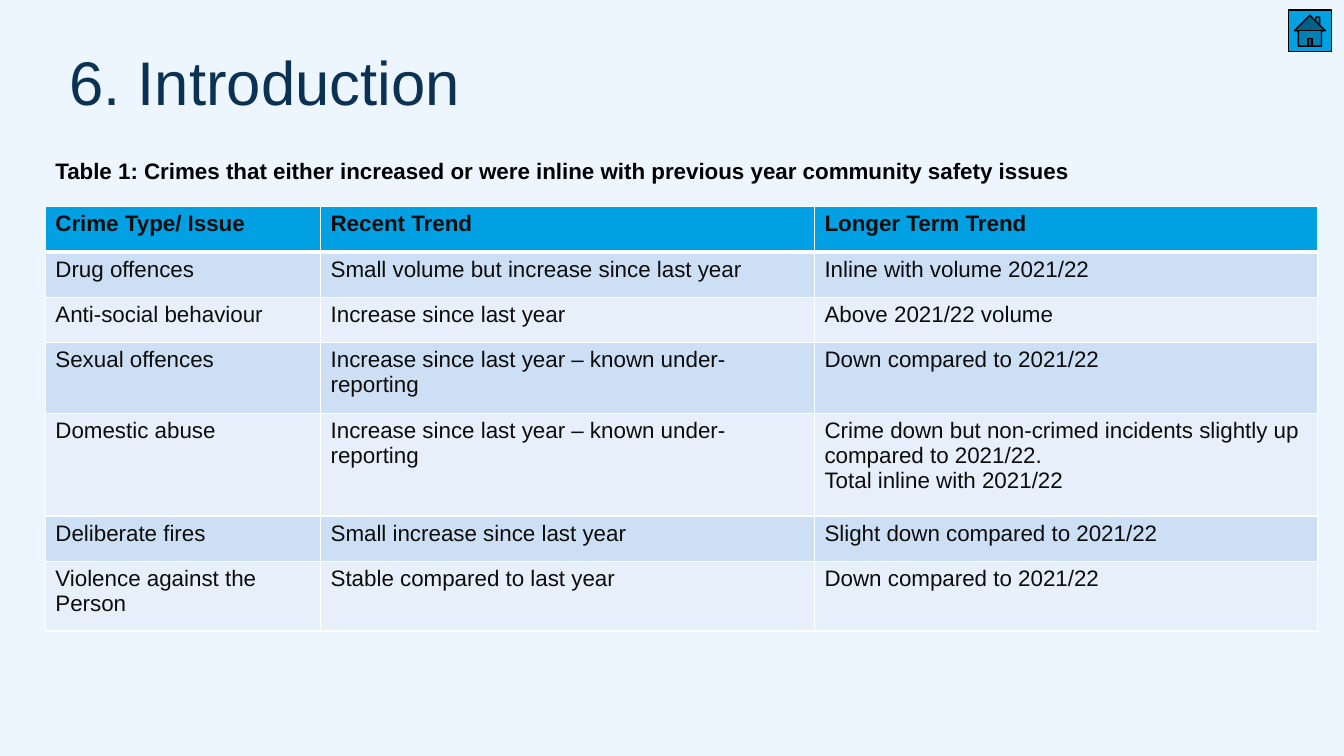
import pptx
import pptx.dml.color
import pptx.enum.shapes
import pptx.oxml
import pptx.oxml.ns
import pptx.util

Pt = pptx.util.Pt


def color(value):
    return pptx.dml.color.RGBColor.from_string(value)


class SlideBuilder:
    """Draw styled elements on one slide, with lengths in points."""

    font = "Arial"
    background = "EDF6FF"
    accent = "00A0E2"
    title_ink = "0B3153"
    body_ink = "0D0D0D"
    black = "000000"
    white = "FFFFFF"
    bands = ("CCDFF4", "E7F0FA")

    def __init__(self, slide):
        self.slide = slide
        fill = slide.background.fill
        fill.solid()
        fill.fore_color.rgb = color(self.background)

    def set_text(self, frame, text, size, ink, bold=False):
        frame.word_wrap = True
        frame.text = text
        for paragraph in frame.paragraphs:
            paragraph.font.name = self.font
            paragraph.font.size = Pt(size)
            paragraph.font.bold = bold
            paragraph.font.color.rgb = color(ink)

    def text(self, box, text, size, ink, bold=False):
        frame = self.slide.shapes.add_textbox(*map(Pt, box)).text_frame
        self.set_text(frame, text, size, ink, bold)
        return frame

    def title(self, box, text):
        frame = self.text(box, text, 44, self.title_ink)
        frame.margin_left = frame.margin_right = 0
        frame.margin_top = frame.margin_bottom = 0
        frame.paragraphs[0].line_spacing = 0.9

    def home_button(self, box):
        kind = pptx.enum.shapes.MSO_SHAPE.ACTION_BUTTON_HOME
        button = self.slide.shapes.add_shape(kind, *map(Pt, box))
        button.shadow.inherit = False
        button.fill.solid()
        button.fill.fore_color.rgb = color(self.accent)
        button.line.color.rgb = color(self.black)
        button.line.width = Pt(1)

    def borders(self, cell, top, bottom):
        properties = cell._tc.get_or_add_tcPr()
        widths = {"L": 1, "R": 1, "T": top, "B": bottom}
        for position, (side, width) in enumerate(widths.items()):
            properties.insert(position, pptx.oxml.parse_xml(
                f'<a:ln{side} {pptx.oxml.ns.nsdecls("a")} w="{Pt(width)}">'
                f'<a:solidFill><a:srgbClr val="{self.white}"/></a:solidFill>'
                f'</a:ln{side}>'))

    def table(self, left, top, widths, heights, rows):
        box = (left, top, sum(widths), sum(heights))
        grid = self.slide.shapes.add_table(
            len(rows), len(widths), *map(Pt, box)).table
        for column, width in zip(grid.columns, widths):
            column.width = Pt(width)
        for index, (row, height, texts) in enumerate(
                zip(grid.rows, heights, rows)):
            row.height = Pt(height)
            header = index == 0
            shade = self.accent if header else self.bands[(index - 1) % 2]
            for cell, text in zip(row.cells, texts):
                self.set_text(cell.text_frame, text, 16, self.body_ink, header)
                cell.fill.solid()
                cell.fill.fore_color.rgb = color(shade)
                self.borders(cell, 3 if index == 1 else 1, 3 if header else 1)


def main():
    deck = pptx.Presentation()
    deck.slide_width, deck.slide_height = Pt(960), Pt(540)
    builder = SlideBuilder(deck.slides.add_slide(deck.slide_layouts[6]))

    under_reported = "Increase since last year – known under-reporting"
    down = "Down compared to 2021/22"
    crime_trends = [
        ("Crime Type/ Issue", "Recent Trend", "Longer Term Trend"),
        ("Drug offences", "Small volume but increase since last year",
         "Inline with volume 2021/22"),
        ("Anti-social behaviour", "Increase since last year",
         "Above 2021/22 volume"),
        ("Sexual offences", under_reported, down),
        ("Domestic abuse", under_reported,
         "Crime down but non-crimed incidents slightly up compared to "
         "2021/22.\nTotal inline with 2021/22"),
        ("Deliberate fires", "Small increase since last year",
         "Slight down compared to 2021/22"),
        ("Violence against the Person", "Stable compared to last year", down),
    ]

    builder.title((49.7, 37.4, 828, 95.8), "6. Introduction")
    builder.table(32.4, 147.6, (196.6, 352.8, 359.3),
                  (32.4, 32.4, 32.4, 50.4, 73.4, 32.4, 49.7), crime_trends)
    builder.home_button((920.2, 7.2, 31, 29.5))
    builder.text((32.4, 108.7, 908.6, 26.6),
                 "Table 1: Crimes that either increased or were inline with "
                 "previous year community safety issues",
                 16, builder.black, True)
    deck.save("out.pptx")


if __name__ == "__main__":
    main()
